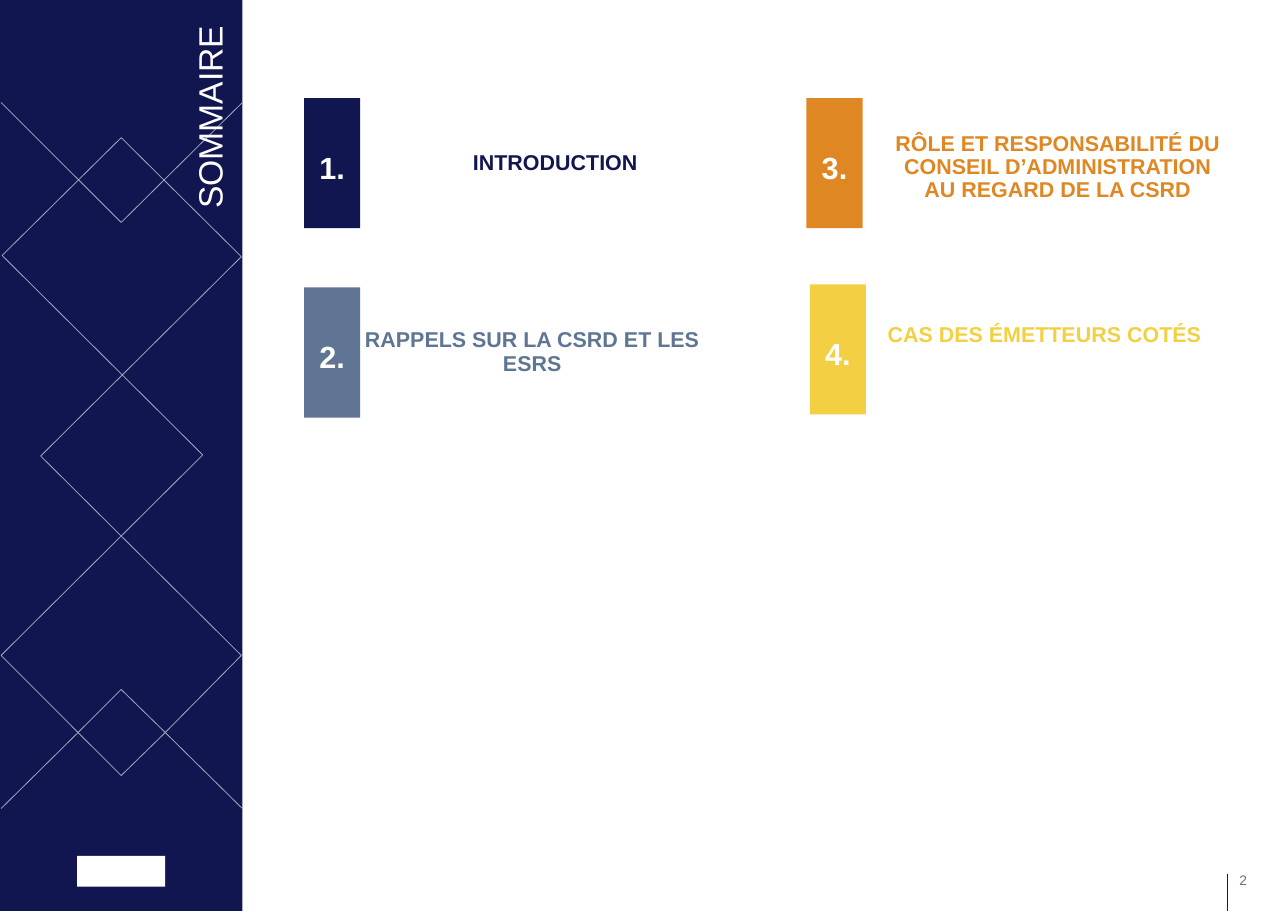
from dataclasses import dataclass

from lxml import etree
from pptx import Presentation
from pptx.dml.color import RGBColor
from pptx.enum.shapes import MSO_CONNECTOR, MSO_SHAPE
from pptx.enum.text import MSO_ANCHOR, PP_ALIGN
from pptx.oxml.ns import qn
from pptx.util import Pt

RECTANGLE = MSO_SHAPE.RECTANGLE
STRAIGHT = MSO_CONNECTOR.STRAIGHT
TOP, MIDDLE, BOTTOM = MSO_ANCHOR.TOP, MSO_ANCHOR.MIDDLE, MSO_ANCHOR.BOTTOM
LEFT, CENTER = PP_ALIGN.LEFT, PP_ALIGN.CENTER


@dataclass(frozen=True)
class Theme:
    font: str = "Arial"
    navy: str = "121650"
    slate: str = "5F7593"
    orange: str = "DF8722"
    yellow: str = "F3D043"
    white: str = "FFFFFF"
    lattice: str = "9DACC0"
    title_size: int = 22
    number_size: int = 20
    heading_size: int = 14
    page_size: int = 9
    hairline: float = 0.5


theme = Theme()

deck = Presentation()
deck.slide_width, deck.slide_height = Pt(841.68), Pt(595.44)
page = deck.slides.add_slide(deck.slide_layouts[6])
shapes = page.shapes


def add_block(left, top, width, height, color):
    block = shapes.add_shape(RECTANGLE, Pt(left), Pt(top), Pt(width), Pt(height))
    block.shadow.inherit = False
    block.fill.solid()
    block.fill.fore_color.rgb = RGBColor.from_string(color)
    block.line.fill.background()
    return block


def write(box, text, size, color, bold=False, align=CENTER, anchor=MIDDLE,
          spacing=1.0, wrap=True):
    frame = box.text_frame
    frame.word_wrap = wrap
    frame.vertical_anchor = anchor
    frame.margin_left = frame.margin_right = 0
    frame.margin_top = frame.margin_bottom = 0
    para = frame.paragraphs[0]
    para.alignment = align
    para.line_spacing = spacing
    span = para.add_run()
    span.text = text
    span.font.name = theme.font
    span.font.size = Pt(size)
    span.font.bold = bold
    span.font.color.rgb = RGBColor.from_string(color)


# Side panel with its lattice of crossing lines
add_block(0, 0, 158.4, 595.44, theme.navy)
lattice_lines = [
    ([(158.4, 67), (79.2, 145.4), (0.7, 67)], False),
    ([(0.7, 528.5), (51, 478.8), (79.2, 506.9), (108, 478.8), (158.4, 528.5)], False),
    ([(1.4, 167), (132.5, 297.4), (0.7, 428.4), (51, 478.8), (79.2, 450.7),
      (108, 478.8), (157.7, 428.4), (26.6, 298.1), (157.7, 167.8), (79.2, 90)], True),
]
for corners, closed in lattice_lines:
    points = [(Pt(x), Pt(y)) for x, y in corners]
    builder = shapes.build_freeform(*points[0], scale=1.0)
    builder.add_line_segments(points[1:], close=closed)
    outline = builder.convert_to_shape()
    outline.shadow.inherit = False
    outline.fill.background()
    outline.line.color.rgb = RGBColor.from_string(theme.lattice)
    outline.line.width = Pt(theme.hairline)

# Plain block at the foot of the panel
add_block(50.4, 559.4, 57.6, 20.2, theme.white)

# Vertical title
title = shapes.add_textbox(Pt(76.3), Pt(62.6), Pt(121), Pt(26.6))
title.rotation = 270
write(title, "SOMMAIRE", theme.title_size, theme.white, align=LEFT, anchor=TOP, wrap=False)

# Page number and its rule
number = shapes.add_textbox(Pt(810), Pt(569.5), Pt(16.6), Pt(10.8))
write(number, "2", theme.page_size, theme.slate, align=LEFT, anchor=BOTTOM, wrap=False)
rule = shapes.add_connector(STRAIGHT, Pt(802.1), Pt(571), Pt(802.1), Pt(595.44))
rule.line.color.rgb = RGBColor.from_string(theme.navy)
rule.line.width = Pt(theme.hairline)
etree.SubElement(rule.element.spPr, qn("a:effectLst"))

# Agenda: text, colour, number position, heading position
agenda = [
    ("INTRODUCTION", theme.navy, (198.7, 64.1), (251.3, 64.1)),
    ("RAPPELS SUR LA CSRD ET LES ESRS", theme.slate, (198.7, 187.9), (236.2, 187.9)),
    ("RÔLE ET RESPONSABILITÉ DU CONSEIL D’ADMINISTRATION AU REGARD DE LA CSRD",
     theme.orange, (527, 64.1), (579.6, 67)),
    ("CAS DES ÉMETTEURS COTÉS", theme.yellow, (529.2, 185.8), (571, 177)),
]
for index, (heading, color, number_at, heading_at) in enumerate(agenda, 1):
    block = add_block(*number_at, 36.7, 85, color)
    write(block, f"{index}.", theme.number_size, theme.white, bold=True, spacing=1.2)
    box = shapes.add_textbox(*map(Pt, heading_at), Pt(223.2), Pt(85))
    write(box, heading, theme.heading_size, color, bold=True, spacing=0.9)

deck.save("out.pptx")
